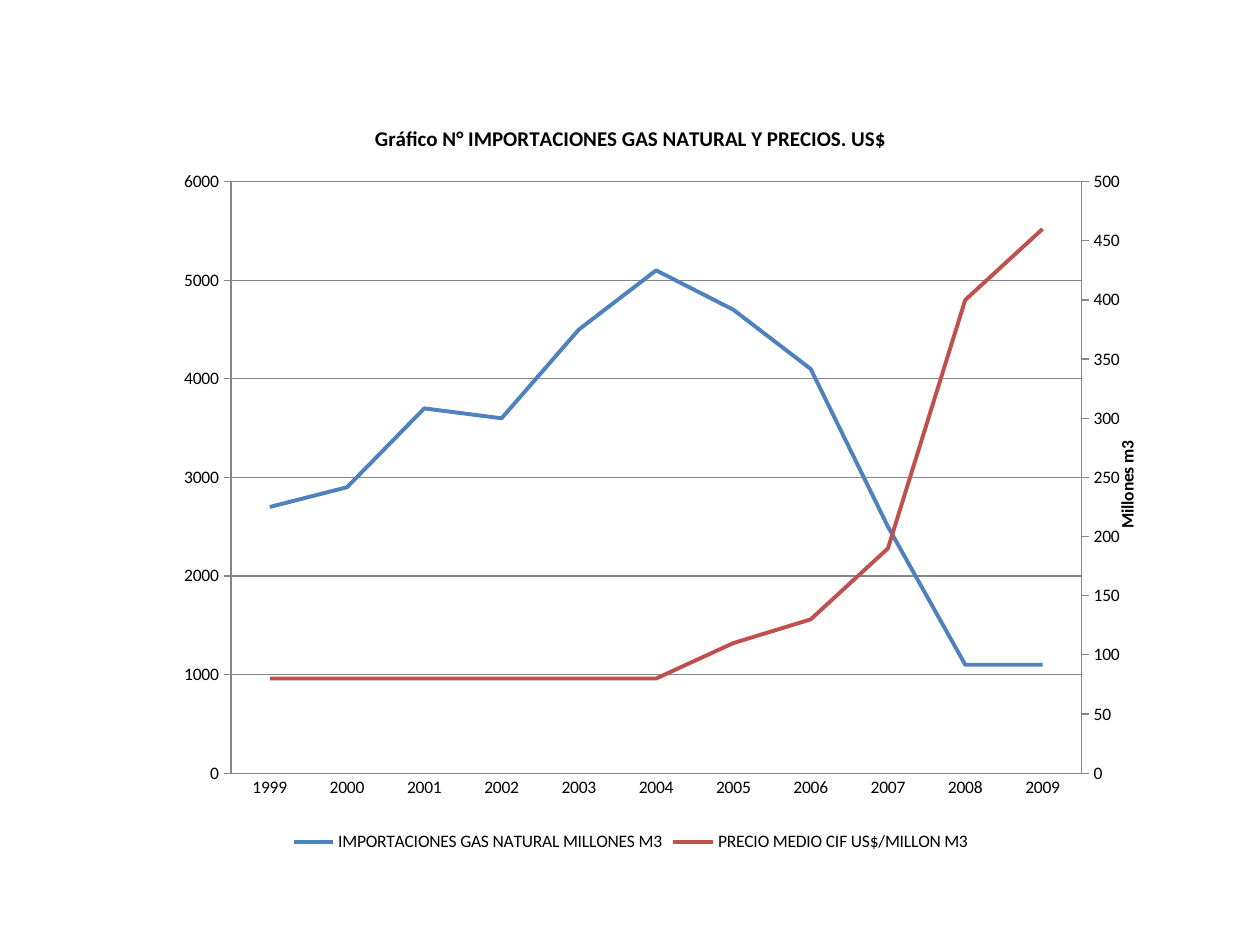
from copy import deepcopy

from lxml import etree
from pptx import Presentation
from pptx.chart.axis import ValueAxis
from pptx.chart.data import CategoryChartData
from pptx.dml.color import RGBColor
from pptx.enum.chart import XL_CHART_TYPE, XL_LEGEND_POSITION, XL_TICK_MARK
from pptx.oxml.ns import qn
from pptx.util import Inches, Pt

LINE = XL_CHART_TYPE.LINE
BOTTOM = XL_LEGEND_POSITION.BOTTOM
NONE, OUT = XL_TICK_MARK.NONE, XL_TICK_MARK.OUTSIDE

TITLE = "Gráfico N° IMPORTACIONES GAS NATURAL Y PRECIOS. US$"
YEARS = [str(year) for year in range(1999, 2010)]
SERIES = [
    ("IMPORTACIONES GAS NATURAL MILLONES M3", "4F81BD",
     [2700, 2900, 3700, 3600, 4500, 5100, 4700, 4100, 2500, 1100, 1100]),
    ("PRECIO MEDIO CIF US$/MILLON M3", "C0504D",
     [80, 80, 80, 80, 80, 80, 110, 130, 190, 400, 460]),
]


def color(code):
    return RGBColor.from_string(code)


def split_axes(chart):
    """Move the second series to a right-hand axis and return that axis."""
    plot = chart.plots[0]._element
    cat, val = chart.category_axis._element, chart.value_axis._element
    twin, cat2, val2 = (deepcopy(part) for part in (plot, cat, val))
    plot.remove(plot.findall(qn("c:ser"))[1])
    twin.remove(twin.findall(qn("c:ser"))[0])
    plot.addnext(twin)
    val.addnext(val2)
    val2.addnext(cat2)
    for part in (twin, cat2, val2):
        for ref in part.iter(qn("c:axId"), qn("c:crossAx")):
            ref.set("val", str(int(ref.get("val")) + 1))
    cat2.find(qn("c:delete")).set("val", "1")
    val2.find(qn("c:axPos")).set("val", "r")
    val2.find(qn("c:crosses")).set("val", "max")
    return ValueAxis(val2)


def place_plot(chart, **box):
    """Fix the inner plot area as fractions of the chart."""
    area = chart._chartSpace.chart.plotArea
    old = area.find(qn("c:layout"))
    if old is not None:
        area.remove(old)
    layout = etree.Element(qn("c:layout"))
    manual = etree.SubElement(layout, qn("c:manualLayout"))
    parts = {"layoutTarget": "inner", "xMode": "edge", "yMode": "edge", **box}
    for name, value in parts.items():
        etree.SubElement(manual, qn("c:" + name)).set("val", str(value))
    area.insert(0, layout)


class Deck:
    face, ink, rule = "Calibri", "000000", "868686"

    def __init__(self, width, height):
        self.prs = Presentation()
        self.prs.slide_width, self.prs.slide_height = Inches(width), Inches(height)
        self.slide = self.prs.slides.add_slide(self.prs.slide_layouts[6])

    def font(self, font, size, bold=False):
        font.name, font.size, font.bold = self.face, Pt(size), bold
        font.color.rgb = color(self.ink)

    def line(self, form, code, width):
        form.line.color.rgb = color(code)
        form.line.width = Pt(width)

    def title(self, owner, text, size):
        frame = owner.text_frame
        frame.text = text
        self.font(frame.paragraphs[0].runs[0].font, size, True)

    def axis(self, axis, tick, top=None, step=None, code=None):
        axis.major_tick_mark, axis.minor_tick_mark = tick, NONE
        axis.has_major_gridlines = False
        self.font(axis.tick_labels.font, 10)
        self.line(axis.format, self.rule, 0.75)
        if top:
            axis.minimum_scale, axis.maximum_scale = 0, top
            axis.major_unit = step
            axis.tick_labels.number_format = code
            axis.tick_labels.number_format_is_linked = False

    def chart(self, left, top, width, height):
        data = CategoryChartData()
        data.categories = YEARS
        for name, _, values in SERIES:
            data.add_series(name, values)
        box = (Inches(n) for n in (left, top, width, height))
        chart = self.slide.shapes.add_chart(LINE, *box, data).chart
        self.font(chart.font, 10)
        right = split_axes(chart)
        place_plot(chart, x=0.11, y=0.11, w=0.83, h=0.78)

        self.axis(chart.category_axis, NONE)
        self.axis(chart.value_axis, NONE, 6000, 1000, "#,##0")
        self.axis(right, OUT, 500, 50, "General")
        chart.value_axis.has_major_gridlines = True
        self.line(chart.value_axis.major_gridlines.format, self.rule, 0.75)
        self.title(chart.value_axis.axis_title, "Millones m3", 10)

        chart.has_title = True
        self.title(chart.chart_title, TITLE, 12)
        chart.chart_title.include_in_layout = False
        chart.has_legend = True
        chart.legend.position = BOTTOM
        chart.legend.include_in_layout = False
        self.font(chart.legend.font, 10)
        for plot, (_, code, _) in zip(chart.plots, SERIES):
            plot.vary_by_categories = False
            plot.series[0].smooth = False
            self.line(plot.series[0].format, code, 2.25)


deck = Deck(10, 7.5)
deck.chart(0.94, 0.78, 8.13, 6.02)
deck.prs.save("out.pptx")
